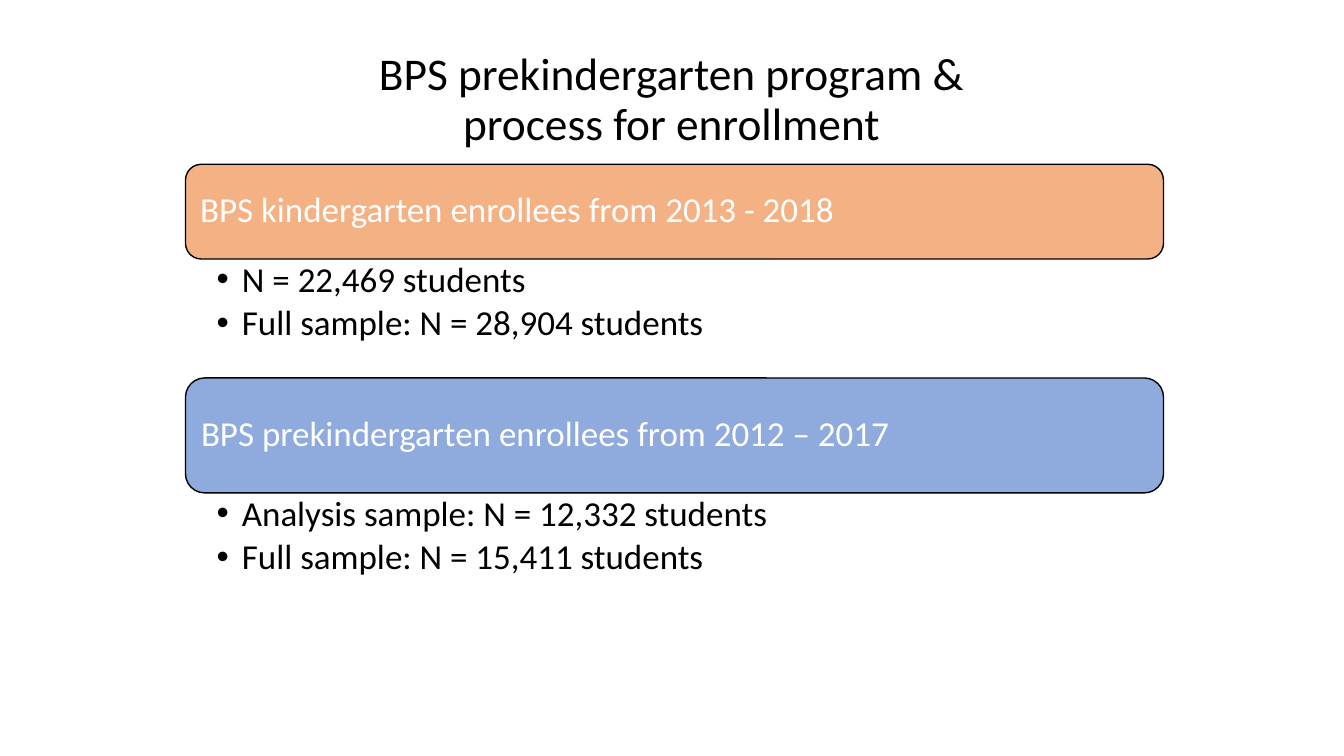
from lxml.etree import SubElement
from pptx import Presentation
from pptx.dml.color import RGBColor
from pptx.enum.shapes import MSO_SHAPE as Shape
from pptx.enum.text import MSO_ANCHOR as Anchor, PP_ALIGN as Align
from pptx.oxml.ns import qn
from pptx.util import Inches, Pt

TITLE = "BPS prekindergarten program &\vprocess for enrollment"
SECTIONS = [
    {
        "heading": "BPS kindergarten enrollees from 2013 - 2018",
        "fill": "F4B183",
        "height": 0.94,
        "bullets": ["N = 22,469 students", "Full sample: N = 28,904 students"],
    },
    {
        "heading": "BPS prekindergarten enrollees from 2012 – 2017",
        "fill": "8FAADC",
        "height": 1.14,
        "bullets": ["Analysis sample: N = 12,332 students", "Full sample: N = 15,411 students"],
    },
]
LEFT, TOP, WIDTH = 1.84, 1.63, 9.7
BULLETS_HEIGHT = 1.18


def color(value):
    return RGBColor.from_string(value)


def write(shape, lines, size=25, ink="000000", align=Align.LEFT, anchor=Anchor.MIDDLE,
          insets=(0.1, 0.1, 0.1, 0.1), bullet=False, after=0):
    frame = shape.text_frame
    frame.word_wrap = True
    frame.vertical_anchor = anchor
    frame.margin_left, frame.margin_top, frame.margin_right, frame.margin_bottom = map(Inches, insets)
    for index, line in enumerate(lines):
        paragraph = frame.add_paragraph() if index else frame.paragraphs[0]
        paragraph.text = line
        paragraph.alignment = align
        paragraph.line_spacing = 0.9
        paragraph.space_after = Pt(after)
        if bullet:
            paragraph.level = 1
            properties = paragraph._p.get_or_add_pPr()
            properties.set("marL", str(Inches(0.25)))
            properties.set("indent", str(-Inches(0.25)))
            SubElement(properties, qn("a:buFont")).set("typeface", "Arial")
            SubElement(properties, qn("a:buChar")).set("char", "•")
        for run in paragraph.runs:
            run.font.name = "Calibri"
            run.font.size = Pt(size)
            run.font.color.rgb = color(ink)


presentation = Presentation()
presentation.slide_width, presentation.slide_height = Inches(13.33), Inches(7.5)
slide = presentation.slides.add_slide(presentation.slide_layouts[6])

title = slide.shapes.add_textbox(Inches(2.35), Inches(0.56), Inches(8.62), Inches(0.88))
write(title, [TITLE], size=32.4, align=Align.CENTER, insets=(0.1, 0.05, 0.1, 0.05))

top = TOP
for section in SECTIONS:
    band = slide.shapes.add_shape(
        Shape.ROUNDED_RECTANGLE, Inches(LEFT), Inches(top), Inches(WIDTH), Inches(section["height"]))
    band.shadow.inherit = False
    band.fill.solid()
    band.fill.fore_color.rgb = color(section["fill"])
    band.line.color.rgb = color("000000")
    band.line.width = Pt(1)
    write(band, [section["heading"]], ink="FFFFFF")
    top += section["height"]

    details = slide.shapes.add_textbox(Inches(LEFT), Inches(top), Inches(WIDTH), Inches(BULLETS_HEIGHT))
    write(details, section["bullets"], anchor=Anchor.TOP, insets=(0.31, 0.03, 0.19, 0.03),
          bullet=True, after=4)
    top += BULLETS_HEIGHT

presentation.save("out.pptx")
